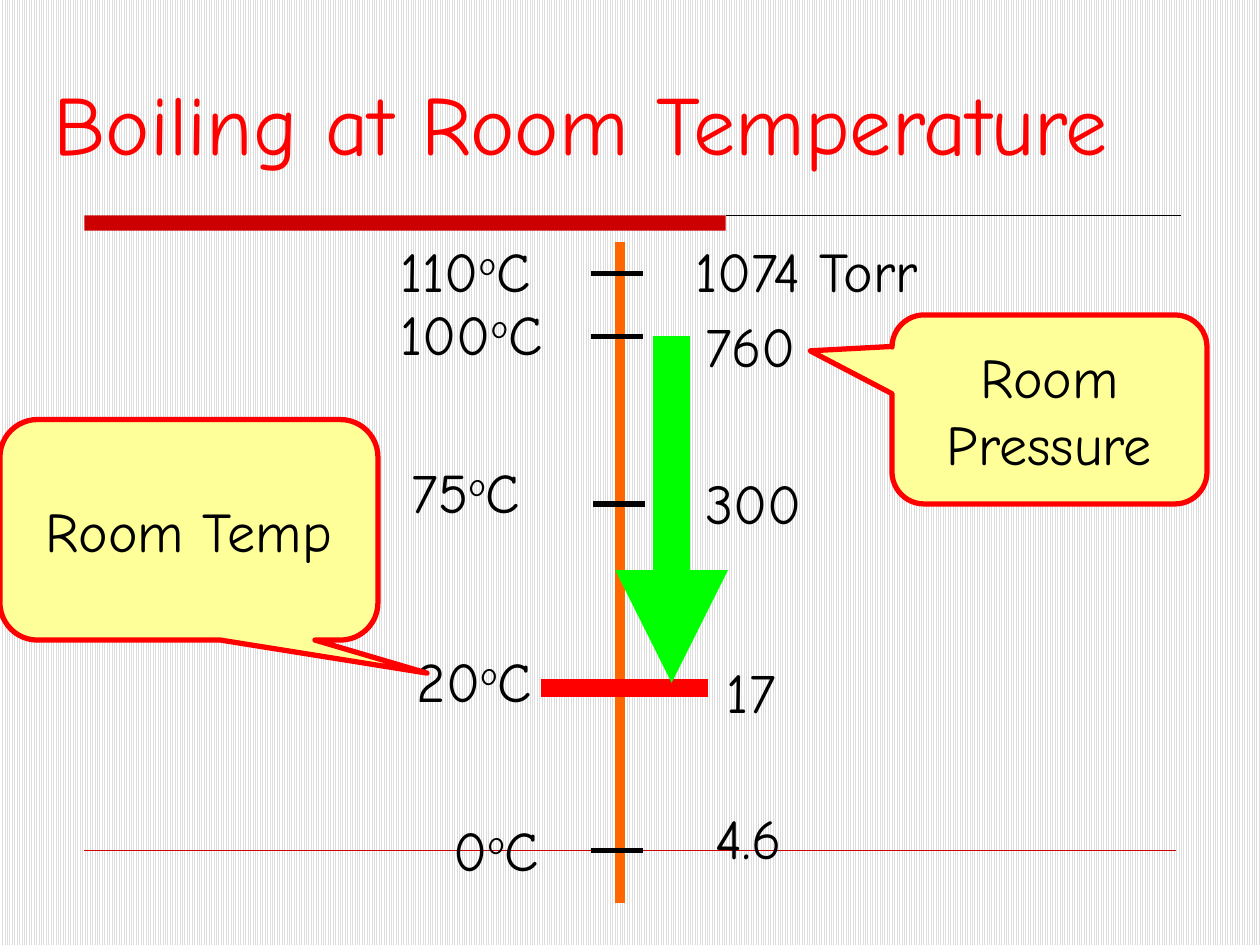
from typing import NamedTuple

from lxml.etree import SubElement
from pptx import Presentation
from pptx.dml.color import RGBColor
from pptx.enum.dml import MSO_PATTERN
from pptx.enum.shapes import MSO_CONNECTOR, MSO_SHAPE
from pptx.enum.text import MSO_ANCHOR, MSO_AUTO_SIZE, PP_ALIGN
from pptx.oxml.ns import qn
from pptx.util import Inches, Pt

COLORS = {
    "black": "000000", "white": "FFFFFF", "stripe": "DDDDDD",
    "rule": "CC0000", "axis": "FF6600", "red": "FF0000",
    "green": "00FF00", "yellow": "FFFF99",
}
FONT = "Comic Neue"
LABEL_HEIGHT = 0.63
TICK_LENGTH = 0.41


class Label(NamedTuple):
    text: str
    left: float
    top: float
    width: float
    superscript: str = ""
    suffix: str = ""


class Line(NamedTuple):
    start: tuple[float, float]
    end: tuple[float, float]
    color: str
    weight: float
    arrow: bool = False


class Callout(NamedTuple):
    text: str
    left: float
    top: float
    width: float
    height: float
    tip: tuple[float, float]


TEMPERATURES = [
    Label(number, left, top, width, "o", "C")
    for number, left, top, width in [
        ("110", 3.08, 1.83, 1.5),
        ("100", 3.08, 2.33, 1.58),
        ("75", 3.17, 3.58, 1.25),
        ("20", 3.21, 5.08, 1.42),
        ("0", 3.5, 6.42, 1.08),
    ]
]
PRESSURES = [
    Label("1074 Torr", 5.42, 1.83, 2.75),
    Label("760", 5.5, 2.42, 2.42),
    Label("300", 5.5, 3.67, 2.08),
    Label("17", 5.67, 5.17, 1.92),
    Label("4.6", 5.58, 6.33, 1.67),
]
TICKS = [(4.69, 2.17), (4.69, 2.67), (4.71, 4), (4.69, 5.5), (4.69, 6.75)]
RULES = [
    Line((5.76, 1.71), (9.37, 1.71), "black", 0.75),
    Line((0.67, 6.75), (9.33, 6.75), "rule", 0.25),
]
AXIS = Line((4.92, 1.92), (4.92, 7.17), "axis", 5.5)
ROOM_TEMPERATURE_MARK = Line((4.29, 5.46), (5.62, 5.46), "red", 10.25)
PRESSURE_DROP = Line((5.33, 2.67), (5.33, 5.42), "green", 21.5, arrow=True)
CALLOUTS = [
    Callout("Room Pressure", 7.08, 2.5, 2.5, 1.5, (-0.76, -0.31)),
    Callout("Room Temp", 0, 3.33, 3, 1.75, (0.63, 0.65)),
]


def rgb(name: str) -> RGBColor:
    return RGBColor.from_string(COLORS[name])


def add_run(paragraph, text: str, size: float, color: str):
    run = paragraph.add_run()
    run.text = text
    for name, value in {"name": FONT, "size": Pt(size)}.items():
        setattr(run.font, name, value)
    run.font.color.rgb = rgb(color)
    return run


def add_label(slide, label: Label, size: float = 32, color: str = "black",
              height: float = LABEL_HEIGHT) -> None:
    box = slide.shapes.add_textbox(*map(Inches, (label.left, label.top, label.width, height)))
    frame = box.text_frame
    for name, value in {"word_wrap": True, "auto_size": MSO_AUTO_SIZE.SHAPE_TO_FIT_TEXT}.items():
        setattr(frame, name, value)
    paragraph = frame.paragraphs[0]
    add_run(paragraph, label.text, size, color)
    if label.superscript:
        raised = add_run(paragraph, label.superscript, size, color)
        raised._r.get_or_add_rPr().set("baseline", "30000")
        add_run(paragraph, label.suffix, size, color)


def add_line(slide, line: Line) -> None:
    connector = slide.shapes.add_connector(
        MSO_CONNECTOR.STRAIGHT, *map(Inches, line.start + line.end))
    connector.line.color.rgb = rgb(line.color)
    connector.line.width = Pt(line.weight)
    properties = connector._element.spPr
    if line.arrow:
        SubElement(properties.find(qn("a:ln")), qn("a:tailEnd"), type="triangle")
    SubElement(properties, qn("a:effectLst"))


def add_title_bar(slide) -> None:
    bar = slide.shapes.add_shape(
        MSO_SHAPE.RECTANGLE, *map(Inches, (0.67, 1.71, 5.09, 0.12)))
    bar.shadow.inherit = False
    bar.fill.solid()
    bar.fill.fore_color.rgb = rgb("rule")
    bar.line.fill.background()


def add_callout(slide, callout: Callout) -> None:
    shape = slide.shapes.add_shape(
        MSO_SHAPE.ROUNDED_RECTANGULAR_CALLOUT,
        *map(Inches, (callout.left, callout.top, callout.width, callout.height)))
    for index, value in enumerate((*callout.tip, 0.17)):
        shape.adjustments[index] = value
    shape.shadow.inherit = False
    shape.fill.solid()
    shape.fill.fore_color.rgb = rgb("yellow")
    shape.line.color.rgb = rgb("red")
    shape.line.width = Pt(3)
    frame = shape.text_frame
    for name, value in {"word_wrap": True, "vertical_anchor": MSO_ANCHOR.MIDDLE}.items():
        setattr(frame, name, value)
    paragraph = frame.paragraphs[0]
    paragraph.alignment = PP_ALIGN.CENTER
    add_run(paragraph, callout.text, 32, "black")


def set_background(slide) -> None:
    fill = slide.background.fill
    fill.patterned()
    fill.pattern = MSO_PATTERN.NARROW_VERTICAL
    fill.fore_color.rgb = rgb("stripe")
    fill.back_color.rgb = rgb("white")


def main() -> None:
    presentation = Presentation()
    presentation.slide_width, presentation.slide_height = Inches(10), Inches(7.5)
    slide = presentation.slides.add_slide(presentation.slide_layouts[6])
    set_background(slide)
    add_title_bar(slide)
    ticks = [Line((x, y), (x + TICK_LENGTH, y), "black", 3) for x, y in TICKS]
    for line in [*RULES, AXIS, *ticks]:
        add_line(slide, line)
    for label in TEMPERATURES + PRESSURES:
        add_label(slide, label)
    add_line(slide, ROOM_TEMPERATURE_MARK)
    for callout in CALLOUTS:
        add_callout(slide, callout)
    add_line(slide, PRESSURE_DROP)
    add_label(slide, Label("Boiling at Room Temperature", 0.33, 0.52, 9.25),
              size=48, color="red", height=0.9)
    presentation.save("out.pptx")


if __name__ == "__main__":
    main()
